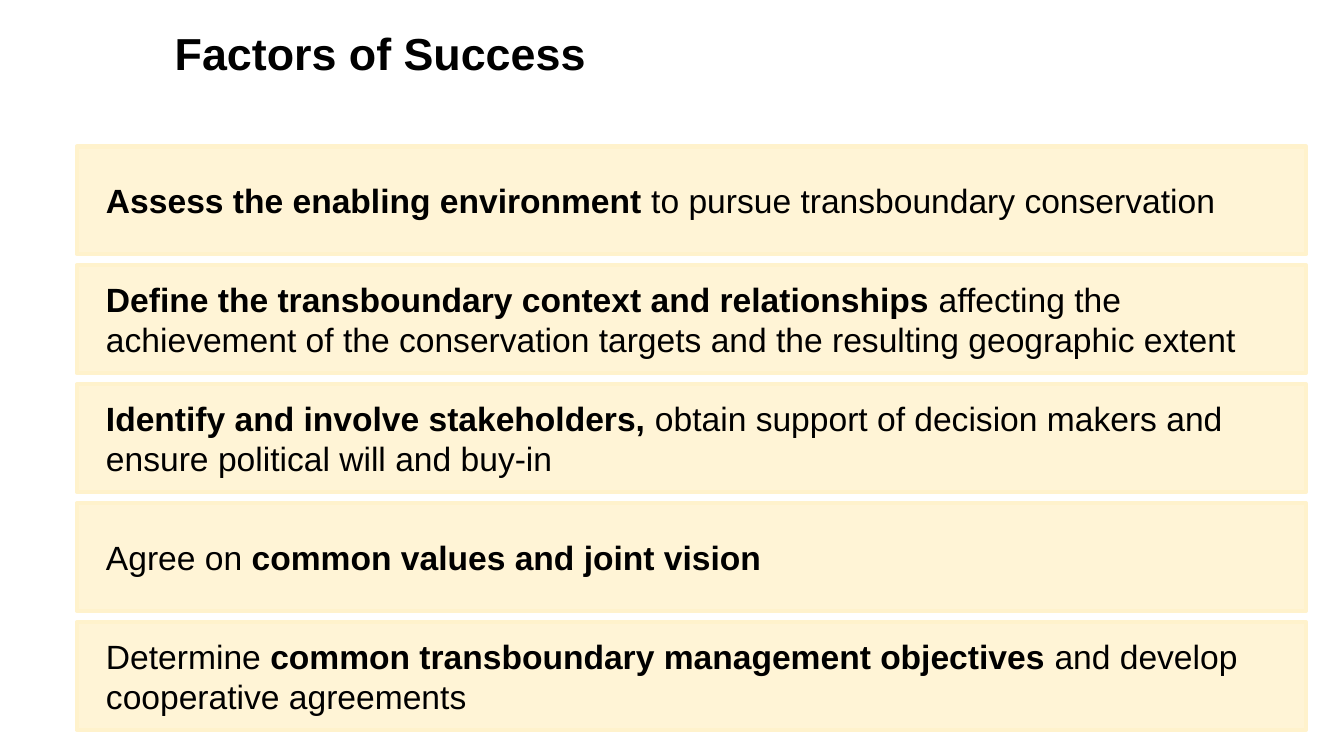
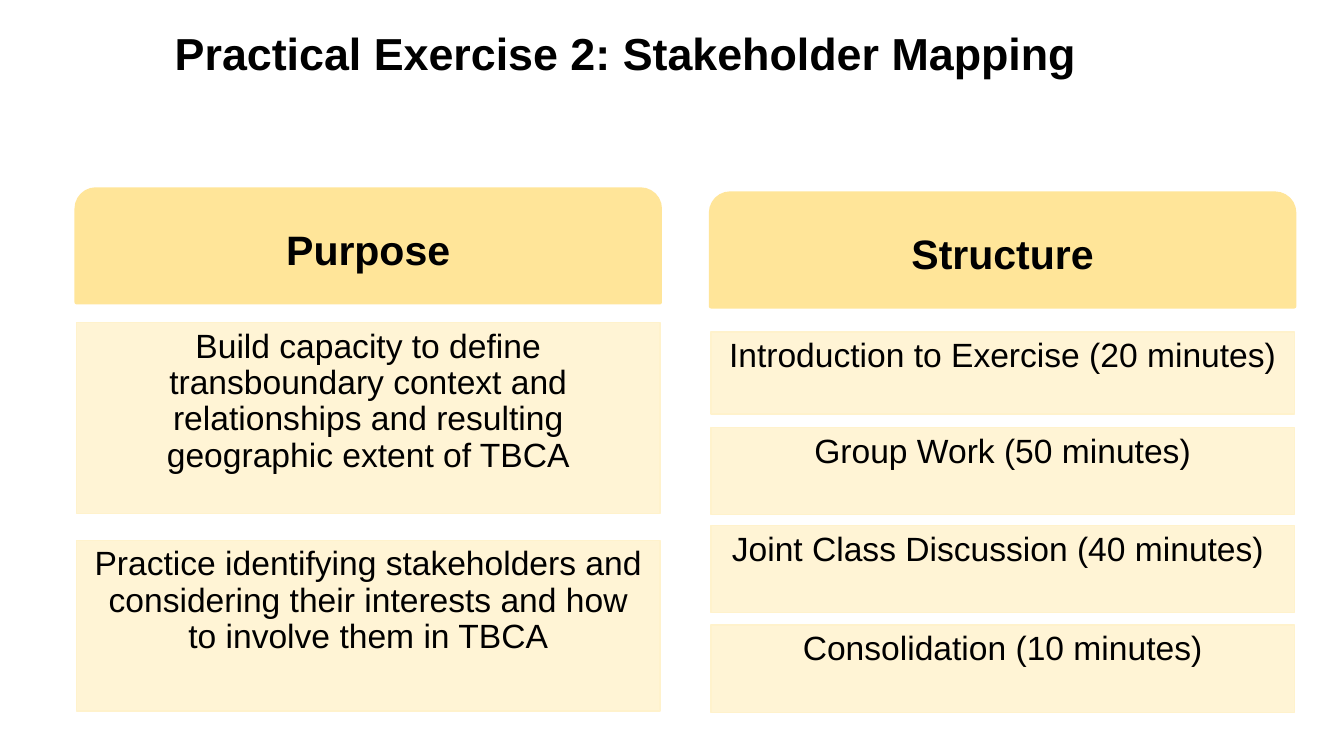
from lxml import etree
from pptx import Presentation
from pptx.dml.color import RGBColor
from pptx.enum import shapes, text
from pptx.oxml import ns
from pptx.util import Inches, Pt

FONT = "Arial"
BLACK = RGBColor(0x00, 0x00, 0x00)
WHITE = RGBColor(0xFF, 0xFF, 0xFF)
CREAM = RGBColor(0xFF, 0xF2, 0xCC)
GOLD = RGBColor(0xFF, 0xE5, 0x99)
RECT = shapes.MSO_SHAPE.RECTANGLE
TAB = shapes.MSO_SHAPE.ROUND_2_SAME_RECTANGLE
LEFT = text.PP_ALIGN.LEFT
MID = text.PP_ALIGN.CENTER

# Widescreen page, 16:9
prs = Presentation()
prs.slide_width = Inches(10)
prs.slide_height = Inches(10 * 9 / 16)


def fill(shape, color, alpha, runs, size, align):
    """Paint a shape and write its runs, given as (words, bold)."""
    shape.fill.solid()
    shape.fill.fore_color.rgb = color
    if alpha < 100:
        tint = shape.fill._xPr.find(".//" + ns.qn("a:srgbClr"))
        etree.SubElement(tint, ns.qn("a:alpha")).set("val", str(alpha * 1000))
    frame = shape.text_frame
    frame.word_wrap = True
    para = frame.paragraphs[0]
    para.alignment = align
    for words, bold in runs:
        run = para.add_run()
        run.text = words
        run.font.name = FONT
        run.font.size = Pt(size)
        run.font.bold = bold
        run.font.color.rgb = BLACK
    return para


def box(slide, kind, at, color, alpha, width, runs, size, align, pads):
    """Add a filled box with an outline of its own colour."""
    shape = slide.shapes.add_shape(kind, *[Inches(v) for v in at])
    shape.shadow.inherit = False
    shape.line.color.rgb = color
    shape.line.width = Pt(width)
    side, end = pads
    frame = shape.text_frame
    frame.margin_left = frame.margin_right = Inches(side)
    frame.margin_top = frame.margin_bottom = Inches(end)
    return shape, fill(shape, color, alpha, runs, size, align)


# Slides with their shared title style
pages = []
for name in ["Factors of Success", "Practical Exercise 2: Stakeholder Mapping"]:
    page = prs.slides.add_slide(prs.slide_layouts[5])
    title = page.shapes.title
    title.left, title.top = Inches(1.2), Inches(0.14)
    title.width, title.height = Inches(8.8), Inches(0.5)
    fill(title, WHITE, 55, [(name, True)], 24, LEFT)
    title.text_frame.vertical_anchor = text.MSO_ANCHOR.TOP
    pages.append(page)

# Slide 1: stack of factors
factors = [
    [("Assess the enabling environment ", True),
     ("to pursue transboundary conservation", False)],
    [("Define the transboundary context and relationships ", True),
     ("affecting the achievement of the conservation targets "
      "and the resulting geographic extent", False)],
    [("Identify and involve stakeholders, ", True),
     ("obtain support of decision makers and ensure political will and buy-in", False)],
    [("Agree on ", False), ("common values and joint vision", True)],
    [("Determine", False),
     (" common transboundary management objectives ", True),
     ("and develop cooperative agreements", False)],
]
step = (4.63 - 1.09) / (len(factors) - 1)
for i, runs in enumerate(factors):
    at = (0.57, 1.09 + i * step, 9.15, 0.8)
    bar, para = box(pages[0], RECT, at, CREAM, 80, 2.25, runs, 18, LEFT, (0.1, 0.1))
    bar.text_frame.vertical_anchor = text.MSO_ANCHOR.MIDDLE
    para.space_after = Pt(6)
    props = para._p.get_or_add_pPr()
    props.set("marL", str(Inches(0.12)))
    props.set("indent", "0")

# Slide 2: two columns, each a header over cards (top, height, words)
columns = [
    (0.57, 1.41, "Purpose", [
        (2.4, 1.42, "Build capacity to define transboundary context and "
                    "relationships and resulting geographic extent of TBCA"),
        (4.02, 1.27, "Practice identifying stakeholders and considering "
                     "their interests and how to involve them in TBCA"),
    ]),
    (5.29, 1.44, "Structure", [
        (2.47, 0.61, "Introduction to Exercise (20 minutes)"),
        (3.18, 0.65, "Group Work (50 minutes)"),
        (3.91, 0.65, "Joint Class Discussion (40 minutes) "),
        (4.65, 0.65, "Consolidation (10 minutes)"),
    ]),
]
for left, top, name, cards in columns:
    at = (left, top, 4.34, 0.84)
    head, para = box(pages[1], TAB, at, GOLD, 100, 2.25,
                     [(name, True)], 22, MID, (0.1, 0.1))
    head.adjustments[0] = 0.17
    head.text_frame.vertical_anchor = text.MSO_ANCHOR.MIDDLE
    for y, height, words in cards:
        at = (left, y, 4.34, height)
        card, para = box(pages[1], RECT, at, CREAM, 81, 0.75,
                         [(words, False)], 18, MID, (0.11, 0.05))
        card.text_frame.vertical_anchor = text.MSO_ANCHOR.TOP
        para.line_spacing = 0.9

prs.save("out.pptx")
